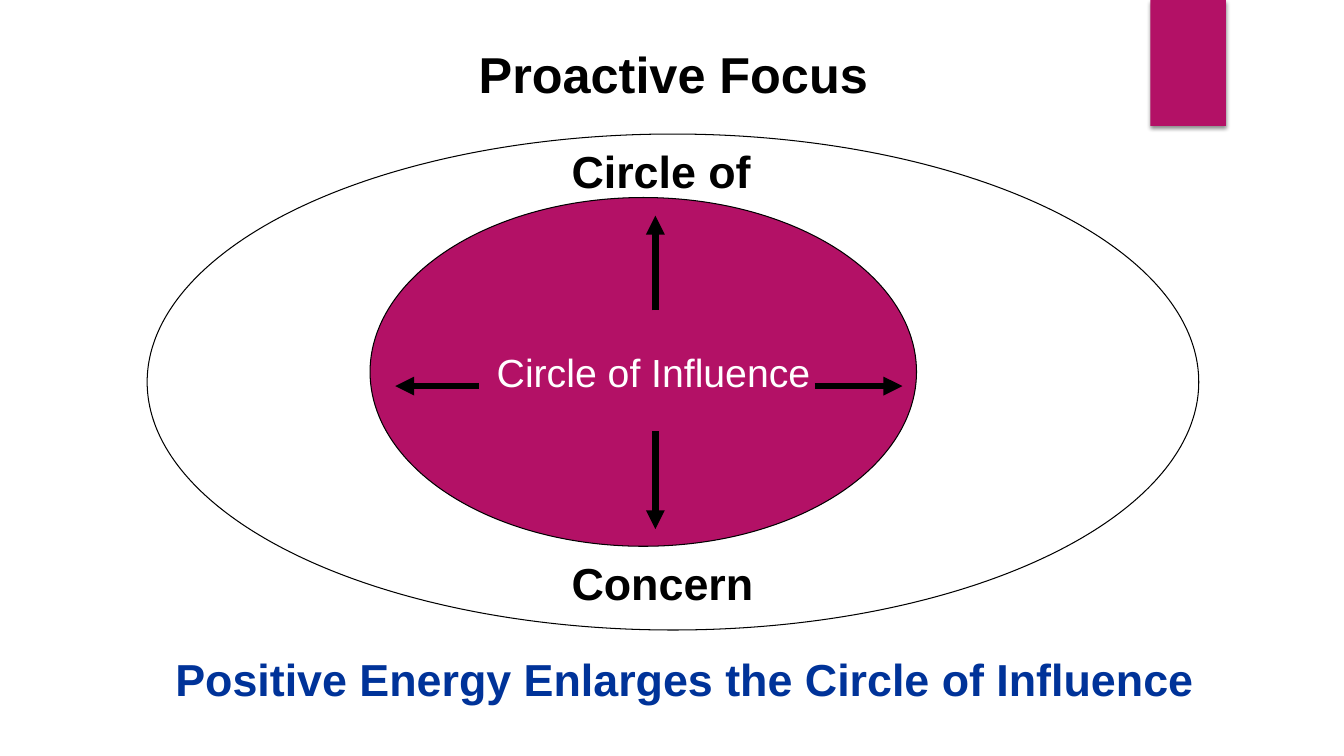
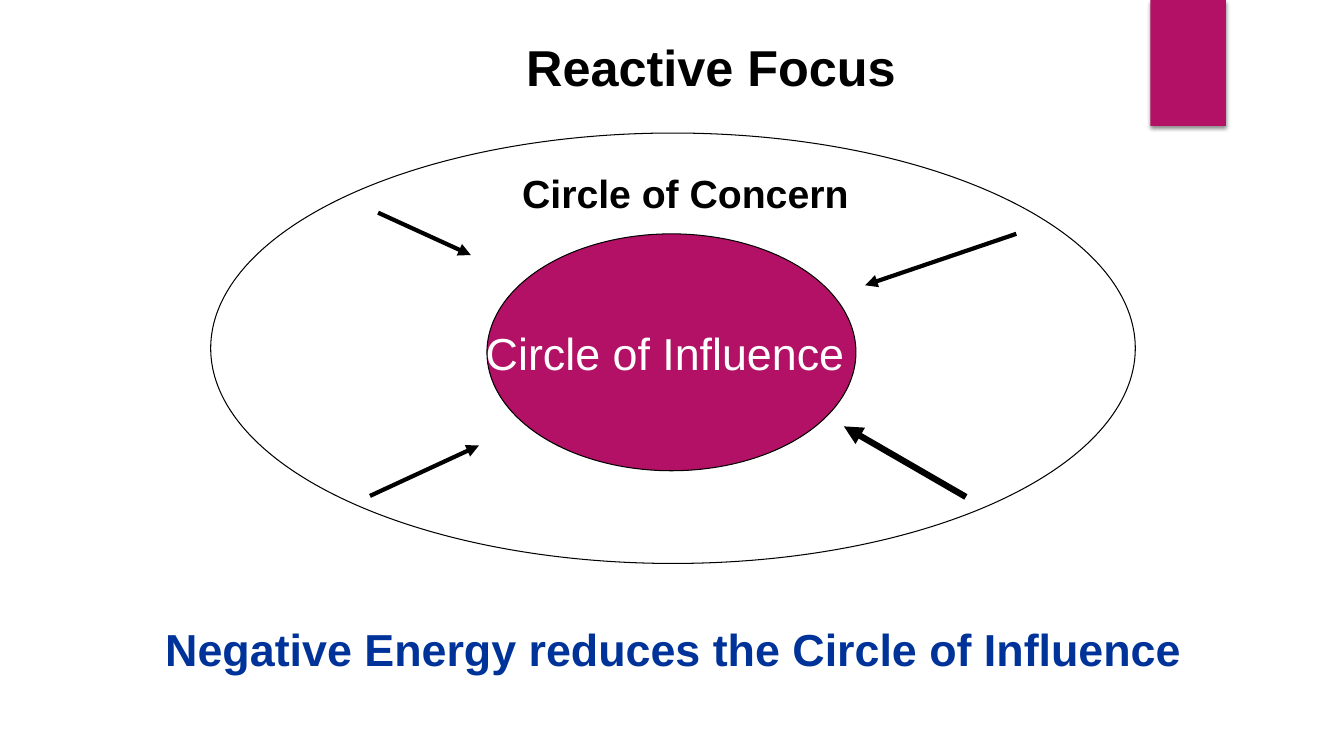
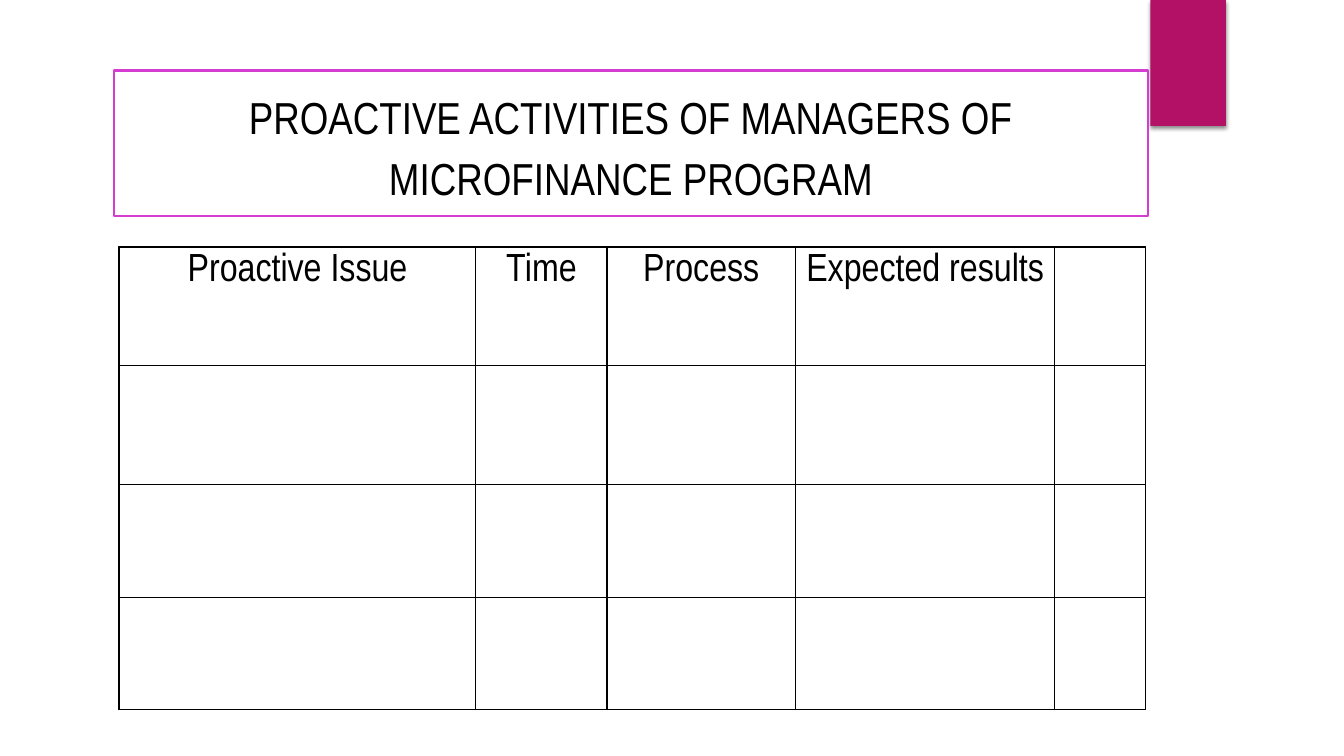
from pptx import Presentation
from pptx.dml.color import RGBColor
from pptx.enum.shapes import MSO_CONNECTOR as Connector, MSO_SHAPE as Shape
from pptx.enum.text import MSO_ANCHOR as Anchor, PP_ALIGN as Align
from pptx.oxml import parse_xml
from pptx.oxml.ns import nsdecls
from pptx.util import Emu, Pt

PX = 9144
BLACK = RGBColor(0x00, 0x00, 0x00)
WHITE = RGBColor(0xFF, 0xFF, 0xFF)
MAGENTA = RGBColor(0xB3, 0x11, 0x66)
ORCHID = RGBColor(0xD5, 0x3D, 0xD0)
NAVY = RGBColor(0x00, 0x33, 0x99)
SANS, NARROW = "Arial", "Arial Narrow"

TITLE = dict(size=36, bold=True)
LABEL = dict(size=32, bold=True)
SMALL_LABEL = dict(size=28, bold=True)
MESSAGE = dict(size=32, bold=True, color=NAVY)
NARROW_STYLE = dict(font=NARROW, align=Align.CENTER, line_spacing=1.15, after=8)

FOCUS_SLIDES = [
    dict(
        inner=(367, 196, 542, 346),
        outer=(146, 133, 1043, 492),
        influence=dict(size=28, margins=(30, 5, 10, 5)),
        texts=[
            ("Circle of", (557, 138, 218, 64), LABEL),
            ("Concern", (557, 546, 211, 64), LABEL),
            ("Proactive Focus", (465, 38, 424, 71), TITLE),
            ("Positive Energy Enlarges the Circle of Influence", (164, 642, 1051, 64), MESSAGE),
        ],
        arrows=[
            (808, 383, 895, 383, 4.5),
            (650, 428, 650, 525, 4.5),
            (475, 383, 392, 383, 4.5),
            (650, 308, 650, 214, 4.5),
        ],
    ),
    dict(
        inner=(483, 232, 366, 235),
        outer=(209, 132, 917, 427),
        influence=dict(size=32, margins=(10, 5, 22, 5)),
        texts=[
            ("Circle of Concern", (508, 163, 359, 57), SMALL_LABEL),
            ("Reactive Focus", (512, 31, 404, 71), TITLE),
            ("Negative Energy reduces the Circle of Influence", (154, 612, 1048, 64), MESSAGE),
        ],
        arrows=[
            (958, 493, 837, 423, 4.5),
            (1008, 232, 858, 283, 3),
            (367, 492, 475, 442, 3),
            (375, 211, 467, 253, 3),
        ],
    ),
]

ACTIVITIES_TITLE = "PROACTIVE ACTIVITIES OF MANAGERS OF MICROFINANCE PROGRAM"
HEADERS = ["Proactive Issue", "Time", "Process", "Expected results", ""]
COLUMN_WIDTHS = [354, 130, 187, 257, 90]
ROW_HEIGHTS = [118, 118, 112, 111]


def px(*lengths):
    return [Emu(length * PX) for length in lengths]


def write(frame, text, size=18, font=SANS, color=BLACK, bold=False, align=Align.LEFT,
          line_spacing=None, after=0, wrap=True, margins=(10, 5, 10, 5)):
    frame.word_wrap = wrap
    frame.margin_left, frame.margin_top, frame.margin_right, frame.margin_bottom = px(*margins)
    para = frame.paragraphs[0]
    para.alignment = align
    para.line_spacing = line_spacing
    para.space_after = Pt(after)
    span = para.add_run()
    span.text = text
    span.font.size = Pt(size)
    span.font.name = font
    span.font.bold = bold
    span.font.color.rgb = color


def add_box(page, kind, area, fill=None, line=None, width=0.75):
    box = page.shapes.add_shape(kind, *px(*area))
    box.shadow.inherit = False
    if fill is None:
        box.fill.background()
    else:
        box.fill.solid()
        box.fill.fore_color.rgb = fill
    if line is None:
        box.line.fill.background()
    else:
        box.line.color.rgb = line
        box.line.width = Pt(width)
    box.text_frame.vertical_anchor = Anchor.MIDDLE
    return box


def add_arrow(page, left, top, right, bottom, width):
    arrow = page.shapes.add_connector(Connector.STRAIGHT, *px(left, top, right, bottom))
    arrow.line.color.rgb = BLACK
    arrow.line.width = Pt(width)
    arrow.line._get_or_add_ln().append(parse_xml(f'<a:tailEnd {nsdecls("a")} type="triangle"/>'))
    arrow._element.spPr.append(parse_xml(f'<a:effectLst {nsdecls("a")}/>'))


def add_page(deck):
    page = deck.slides.add_slide(deck.slide_layouts[6])
    band = add_box(page, Shape.RECTANGLE, (1141, 0, 75, 125), fill=MAGENTA)
    effects = band._element.spPr.find("{*}effectLst")
    effects.append(parse_xml(
        f'<a:outerShdw {nsdecls("a")} blurRad="{Pt(3)}" dist="{Pt(2)}" dir="5400000">'
        '<a:srgbClr val="000000"><a:alpha val="45000"/></a:srgbClr></a:outerShdw>'))
    return page


def add_focus_page(deck, focus):
    page = add_page(deck)
    inner = add_box(page, Shape.OVAL, focus["inner"], fill=MAGENTA, line=BLACK)
    write(inner.text_frame, "Circle of Influence", color=WHITE, align=Align.CENTER,
          wrap=False, **focus["influence"])
    add_box(page, Shape.OVAL, focus["outer"], line=BLACK)
    for text, area, style in focus["texts"]:
        write(page.shapes.add_textbox(*px(*area)).text_frame, text, **style)
    for arrow in focus["arrows"]:
        add_arrow(page, *arrow)


def border_cell(cell):
    properties = cell._tc.get_or_add_tcPr()
    for position, side in enumerate(("lnL", "lnR", "lnT", "lnB")):
        properties.insert(position, parse_xml(
            f'<a:{side} {nsdecls("a")} w="{Pt(1)}"><a:solidFill>'
            f'<a:srgbClr val="{BLACK}"/></a:solidFill></a:{side}>'))


def add_activities_page(deck):
    page = add_page(deck)
    area = px(118, 245, sum(COLUMN_WIDTHS), sum(ROW_HEIGHTS))
    table = page.shapes.add_table(len(ROW_HEIGHTS), len(COLUMN_WIDTHS), *area).table
    table.first_row = table.horz_banding = False
    for column, width in zip(table.columns, px(*COLUMN_WIDTHS)):
        column.width = width
    for row, height in zip(table.rows, px(*ROW_HEIGHTS)):
        row.height = height
    for cell in table.iter_cells():
        cell.fill.background()
        border_cell(cell)
    for cell, header in zip(table.rows[0].cells, HEADERS):
        cell.margin_left, cell.margin_top, cell.margin_right, cell.margin_bottom = px(7, 0, 7, 0)
        if header:
            write(cell.text_frame, header, size=28, margins=(7, 0, 7, 0), wrap=None, **NARROW_STYLE)
    title = add_box(page, Shape.RECTANGLE, (113, 70, 1026, 144), fill=WHITE, line=ORCHID, width=1.5)
    write(title.text_frame, ACTIVITIES_TITLE, size=32, **NARROW_STYLE)


def main():
    deck = Presentation()
    deck.slide_width, deck.slide_height = px(1333, 750)
    for focus in FOCUS_SLIDES:
        add_focus_page(deck, focus)
    add_activities_page(deck)
    deck.save("out.pptx")


if __name__ == "__main__":
    main()
